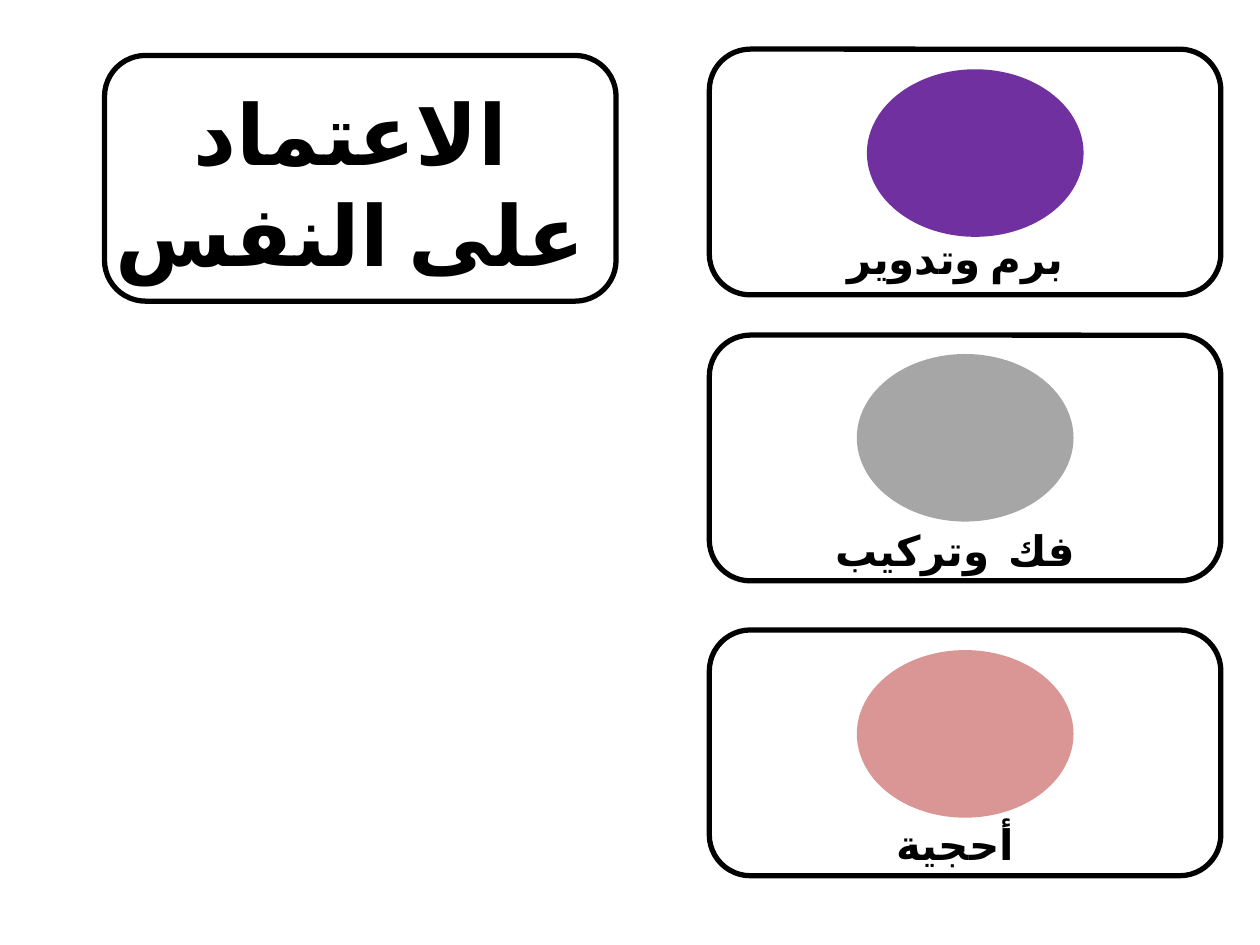
from lxml.etree import SubElement
from pptx import Presentation
from pptx.dml.color import RGBColor
from pptx.enum.lang import MSO_LANGUAGE_ID as Lang
from pptx.enum.shapes import MSO_SHAPE as Shape
from pptx.enum.text import MSO_AUTO_SIZE as AutoSize, PP_ALIGN as Align
from pptx.oxml.ns import qn
from pptx.util import Inches, Pt

COLORS = {"ink": "000000", "purple": "7030A0", "gray": "A6A6A6", "rose": "D99694"}
FONT = "Calibri"
CARD_W, CARD_H = 4.06, 1.95
CARD_X, LABEL_X, LABEL_W = 5.63, 5.47, 4.22
OVAL_W, OVAL_H = 1.72, 1.33

TITLE = [("الاعتماد على النفس", 48)]
CARDS = [
    {"top": 0.39, "oval": (6.88, 0.55), "color": "purple",
     "label": (1.8, 0.5), "runs": [("برم وتدوير", 24)]},
    {"top": 2.66, "oval": (6.8, 2.81), "color": "gray",
     "label": (3.78, 0.91), "runs": [("فك", 24), (" ", 48), ("وتركيب", 24)]},
    {"top": 5, "oval": (6.8, 5.16), "color": "rose",
     "label": (6.45, 0.5), "runs": [("أحجية", 24)]},
]


def rgb(name):
    return RGBColor.from_string(COLORS[name])


def add_frame(s, x, y):
    sp = s.shapes.add_shape(Shape.ROUNDED_RECTANGLE, *map(Inches, (x, y, CARD_W, CARD_H)))
    sp.shadow.inherit = False
    sp.fill.background()
    sp.line.color.rgb = rgb("ink")
    sp.line.width = Pt(3)


def add_oval(s, x, y, color):
    sp = s.shapes.add_shape(Shape.FLOWCHART_CONNECTOR, *map(Inches, (x, y, OVAL_W, OVAL_H)))
    sp.shadow.inherit = False
    sp.fill.solid()
    sp.fill.fore_color.rgb = rgb(color)
    sp.line.fill.background()


def add_label(s, x, y, w, h, runs):
    tf = s.shapes.add_textbox(*map(Inches, (x, y, w, h))).text_frame
    tf.word_wrap = True
    tf.auto_size = AutoSize.SHAPE_TO_FIT_TEXT
    p = tf.paragraphs[0]
    p.alignment = Align.CENTER
    p._p.get_or_add_pPr().set("rtl", "1")
    for text, size in runs:
        r = p.add_run()
        r.text = text
        r.font.name = FONT
        r.font.size = Pt(size)
        r.font.bold = True
        r.font.color.rgb = rgb("ink")
        r.font.language_id = Lang.ARABIC_UAE
        SubElement(r._r.get_or_add_rPr(), qn("a:cs"), typeface=FONT)


def main():
    prs = Presentation()
    prs.slide_width, prs.slide_height = Inches(10), Inches(7.5)
    s = prs.slides.add_slide(prs.slide_layouts[6])
    for card in CARDS:
        add_frame(s, CARD_X, card["top"])
        label_y, label_h = card["label"]
        add_label(s, LABEL_X, label_y, LABEL_W, label_h, card["runs"])
    for card in CARDS:
        add_oval(s, *card["oval"], card["color"])
    add_frame(s, 0.83, 0.44)
    add_label(s, 0.75, 0.6, CARD_W, 1.72, TITLE)
    prs.save("out.pptx")


if __name__ == "__main__":
    main()
